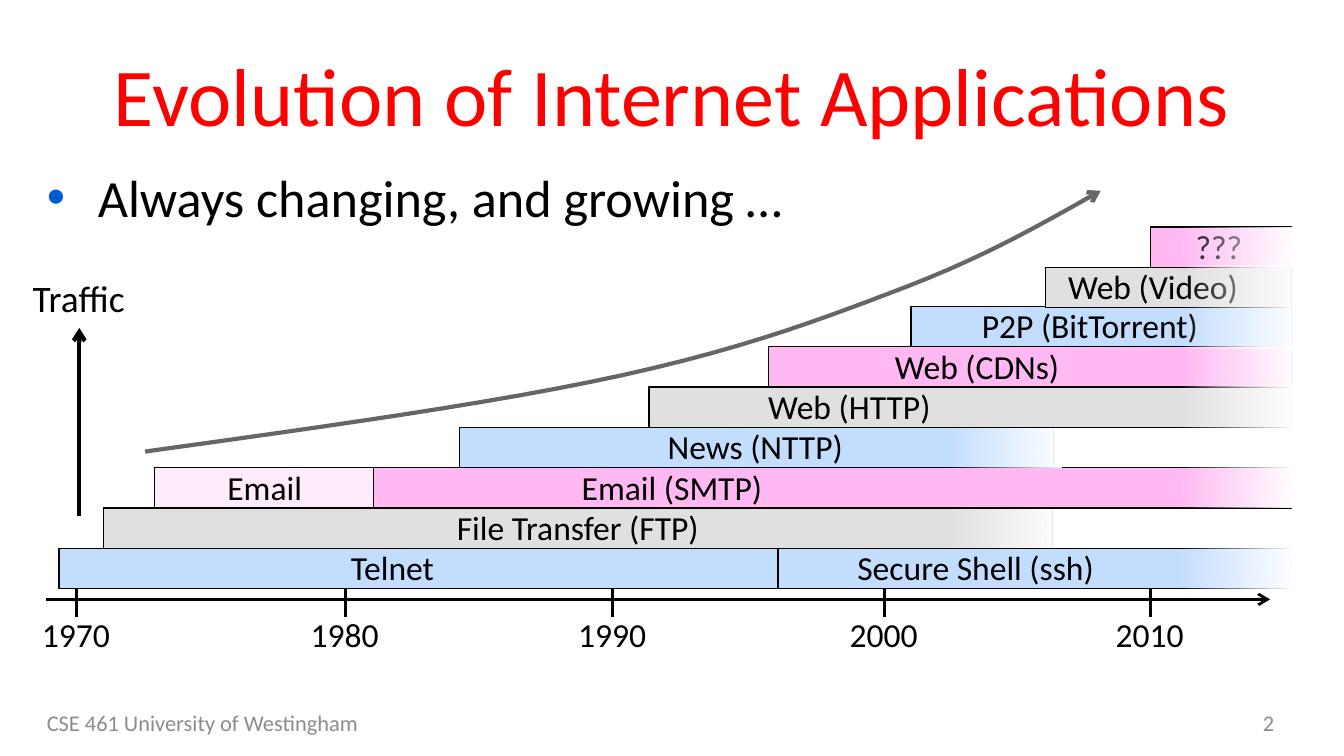
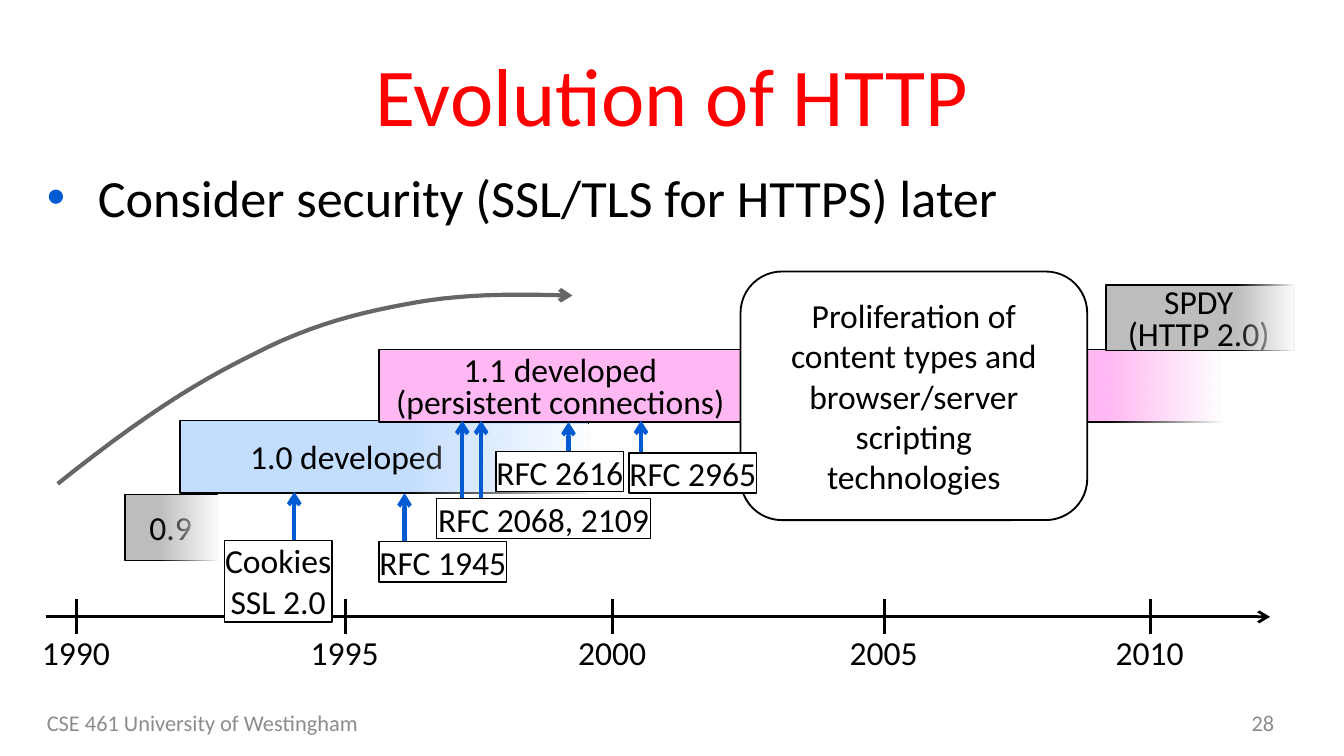
"""Build two slides on the evolution of Internet applications and of HTTP."""
from lxml.etree import SubElement
from pptx import Presentation
from pptx.dml.color import RGBColor as RGB
from pptx.enum.shapes import MSO_CONNECTOR as CONN, MSO_SHAPE as SHAPE
from pptx.enum.text import MSO_ANCHOR as ANCHOR, PP_ALIGN as ALIGN
from pptx.oxml.ns import qn
from pptx.util import Emu, Pt

PX = 9144
FONT = "Calibri"
COLORS = {
    "title": "FF0000", "text": "000000", "footer": "8C8C8C", "accent": "005BD3",
    "curve": "666666", "white": "FFFFFF", "gray": "E0E0E0", "dark": "BDBDBD",
    "pink": "FFB8F2", "pale": "FFEBFB", "blue": "C3DDFF",
}
C = {name: RGB.from_string(value) for name, value in COLORS.items()}


def put(s, text, x, y, w, h, size=18, color="text", fill=None, border=0.75,
        shape=SHAPE.RECTANGLE, align=ALIGN.CENTER, anchor=ANCHOR.TOP,
        inset=(10, 5, 10, 5), spacing=None, wrap=True, bullet=False):
    """Add a text box, a filled shape with text, or a fade to white."""
    box = [Emu(v * PX) for v in (x, y, w, h)]
    if fill is None:
        sp = s.shapes.add_textbox(*box)
    else:
        sp = s.shapes.add_shape(shape, *box)
        sp.shadow.inherit = False
    if fill == "fade":
        sp.line.fill.background()
        sp.fill.gradient()
        sp.fill.gradient_angle = 180
        for pos, stop in enumerate(sp.fill.gradient_stops):
            stop.position = pos
            stop.color.rgb = C["white"]
        clear = list(sp.element.spPr.iter(qn("a:srgbClr")))[-1]
        SubElement(clear, qn("a:alpha"), val="0")
        return
    if fill:
        sp.fill.solid()
        sp.fill.fore_color.rgb = C[fill]
        sp.line.color.rgb = C["text"]
        sp.line.width = Pt(border)
    tf = sp.text_frame
    tf.word_wrap = wrap
    tf.vertical_anchor = anchor
    tf.margin_left, tf.margin_top, tf.margin_right, tf.margin_bottom = [
        Emu(v * PX) for v in inset]
    for i, part in enumerate(text.split("\n")):
        p = tf.add_paragraph() if i else tf.paragraphs[0]
        p.alignment = align
        p.line_spacing = spacing
        if bullet:
            pPr = p._p.get_or_add_pPr()
            pPr.set("marL", str(38 * PX))
            pPr.set("indent", str(-38 * PX))
            SubElement(SubElement(pPr, qn("a:buClr")), qn("a:srgbClr"), val=COLORS["accent"])
            SubElement(pPr, qn("a:buFont"), typeface="Arial")
            SubElement(pPr, qn("a:buChar"), char="•")
        r = p.add_run()
        r.text = part
        r.font.name = FONT
        r.font.size = Pt(size)
        r.font.color.rgb = C[color]


def draw(s, points, color="text", width=1.5, arrow=True):
    """Draw a straight line, or a curve through cubic control points."""
    if len(points) == 2:
        ends = [Emu(v * PX) for pt in points for v in pt]
        sp = s.shapes.add_connector(CONN.STRAIGHT, *ends)
        SubElement(sp.element.spPr, qn("a:effectLst"))
    else:
        trace = []
        for i in range(0, len(points) - 1, 3):
            for t in [n / 12 for n in range(1, 13)]:
                weights = ((1 - t) ** 3, 3 * t * (1 - t) ** 2, 3 * t * t * (1 - t), t ** 3)
                trace.append([PX * sum(k * pt[axis] for k, pt in zip(weights, points[i:i + 4]))
                              for axis in (0, 1)])
        fb = s.shapes.build_freeform(points[0][0] * PX, points[0][1] * PX)
        fb.add_line_segments(trace, close=False)
        sp = fb.convert_to_shape()
        sp.shadow.inherit = False
        sp.fill.background()
    sp.line.color.rgb = C[color]
    sp.line.width = Pt(width)
    if arrow:
        SubElement(sp.element.spPr.find(qn("a:ln")), qn("a:tailEnd"), type="arrow")


prs = Presentation()
prs.slide_width = Emu(1000 * PX)
prs.slide_height = Emu(1000 * PX * 9 // 16)

apps_bars = [
    ("File Transfer (FTP)", 77, 378, 706, 30, "gray", 430),
    ("Email (SMTP)", 206, 348, 755, 30, "pink", 500),
    ("News (NTTP)", 342, 318, 442, 30, "blue", 562),
    ("", 704, 318, 86, 30, "fade", 0),
    ("", 705, 379, 86, 30, "fade", 0),
    ("Secure Shell (ssh)", 304, 408, 657, 30, "blue", 726),
    ("Telnet", 44, 408, 535, 30, "blue", 292),
    ("Email", 115, 348, 163, 30, "pale", 197),
    ("Web (HTTP)", 483, 288, 478, 30, "gray", 632),
    ("Web (CDNs)", 572, 258, 389, 30, "pink", 727),
    ("P2P (BitTorrent)", 678, 228, 283, 30, "blue", 811),
    ("Web (Video)", 778, 199, 183, 30, "gray", 858),
    ("???", 856, 169, 105, 30, "pink", 907),
]
apps_bars += [("", x, y, 86, 30, "fade", 0) for x, y in (
    (876, 348), (876, 408), (876, 288), (879, 258), (878, 229), (881, 198), (876, 169))]
http_bars = [
    ("1.0 developed", 134, 313, 304, 54, "blue", 258),
    ("1.1 developed\n(persistent connections)", 282, 260, 626, 54, "pink", 417),
    ("0.9", 93, 368, 69, 49, "dark", 127),
    ("", 823, 261, 86, 57, "fade", 0),
    ("", 119, 369, 44, 49, "fade", 0),
    ("", 301, 316, 141, 57, "fade", 0),
    ("SPDY\n(HTTP 2.0)", 823, 212, 140, 49, "dark", 892),
    ("", 920, 212, 44, 49, "fade", 0),
]
apps_curve = [(108, 336), (238, 318), (369, 300), (464, 279), (559, 258),
              (618, 235), (678, 212), (737, 189), (778, 165), (819, 142)]
http_curve = [(43, 360), (102, 313), (143, 286), (188, 264), (232, 241),
              (270, 232), (310, 225), (350, 218), (392, 219), (426, 220)]

slides = []
for title, point, page, axis_y, first, step, curve, bars, anchor in (
        ("Evolution of Internet Applications", "Always changing, and growing …", "2",
         446, 1970, 10, apps_curve, apps_bars, ANCHOR.TOP),
        ("Evolution of HTTP", "Consider security (SSL/TLS for HTTPS) later", "28",
         459, 1990, 5, http_curve, http_bars, ANCHOR.MIDDLE)):
    s = prs.slides.add_slide(prs.slide_layouts[6])
    slides.append(s)
    put(s, title, 25, 23, 950, 94, size=44, color="title", anchor=ANCHOR.MIDDLE)
    put(s, point, 25, 118, 950, 371, size=28, align=ALIGN.LEFT, bullet=True)
    for text, x, w, align in (("CSE 461 University of Westingham", 25, 317, ALIGN.LEFT),
                              (page, 725, 233, ALIGN.RIGHT)):
        put(s, text, x, 523, w, 30, size=12, color="footer", align=align, anchor=ANCHOR.MIDDLE)
    draw(s, [(34, axis_y), (945, axis_y)])
    for i, x in enumerate((57, 257, 456, 658, 856)):
        draw(s, [(x, axis_y - 13), (x, axis_y + 13)], arrow=False)
        put(s, str(first + step * i), x - 36, axis_y + 12, 71, 35, spacing=0.8, wrap=False)
    for text, x, y, w, h, fill, center in bars:
        shift = 2 * center - (2 * x + w)
        put(s, text, x, y, w, h, fill=fill, anchor=anchor, spacing=0.8,
            inset=(max(shift, 0), 5, max(-shift, 0), 0))
    draw(s, curve, color="curve", width=2.25)

apps, http = slides
draw(apps, [(59, 384), (59, 244)], width=2.25)
put(apps, "Traffic", 9, 206, 99, 38, size=20, spacing=0.8)

put(http, "Proliferation of content types and browser/server scripting technologies",
    551, 202, 258, 185, fill="white", border=1, shape=SHAPE.ROUNDED_RECTANGLE,
    anchor=ANCHOR.MIDDLE)
for text, x, y, w, h, tip, arrows in (
        ("RFC 1945", 282, 403, 95, 30, 367, [301]),
        ("RFC 2068, 2109", 325, 371, 159, 30, 313, [344, 358]),
        ("RFC 2616", 369, 336, 95, 30, 314, [423]),
        ("Cookies\nSSL 2.0", 167, 402, 80, 61, 366, [219]),
        ("RFC 2965", 468, 337, 95, 30, 313, [477])):
    for arrow_x in arrows:
        draw(http, [(arrow_x, y + 2), (arrow_x, tip)], color="accent", width=2.25)
    put(http, text, x, y, w, h, fill="white", inset=(0, 0, 0, 0), wrap=False)

prs.save("out.pptx")
